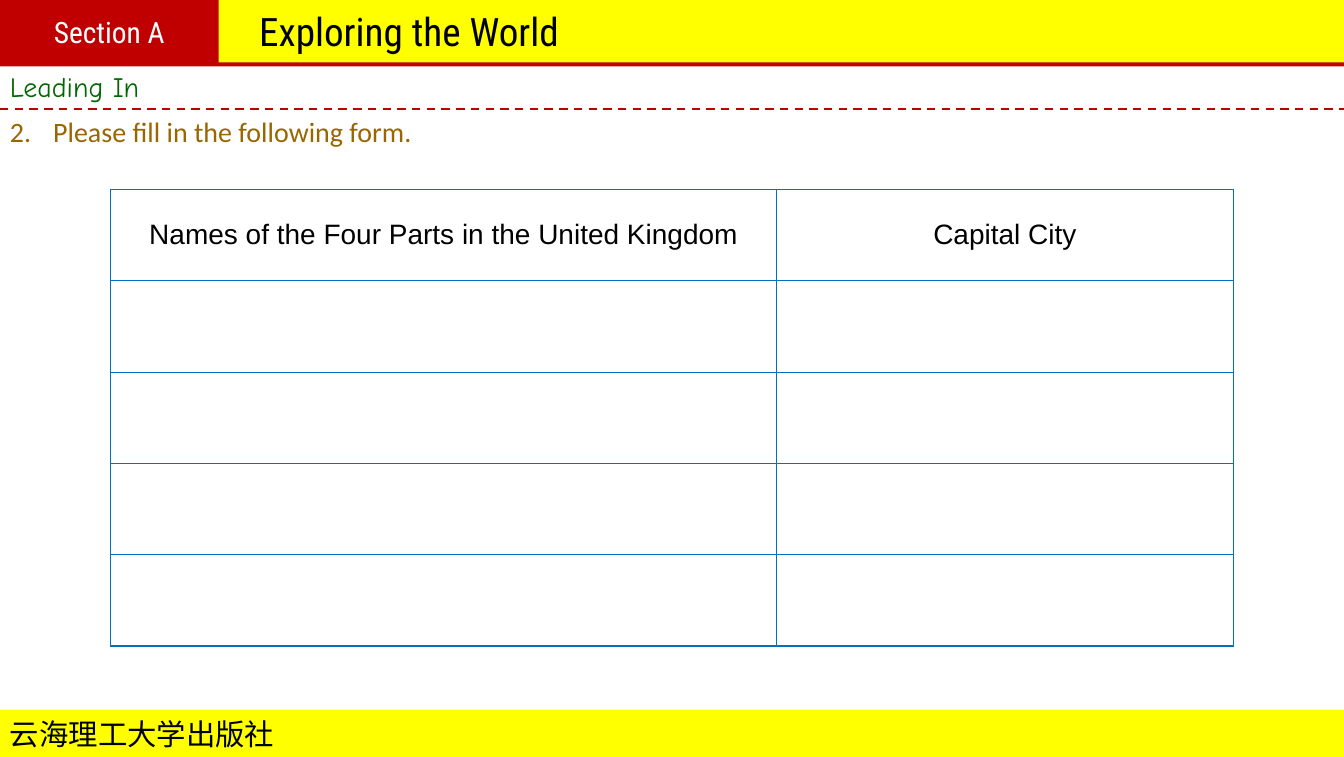
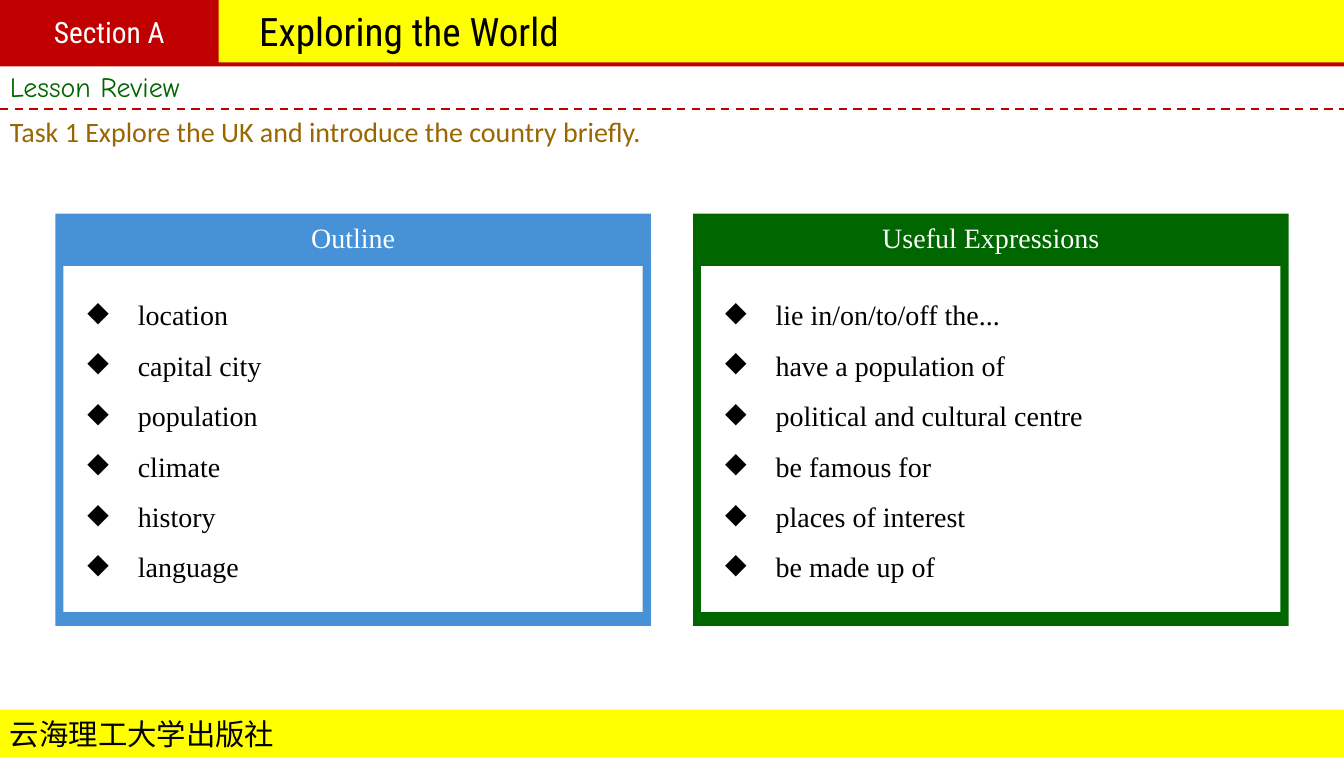
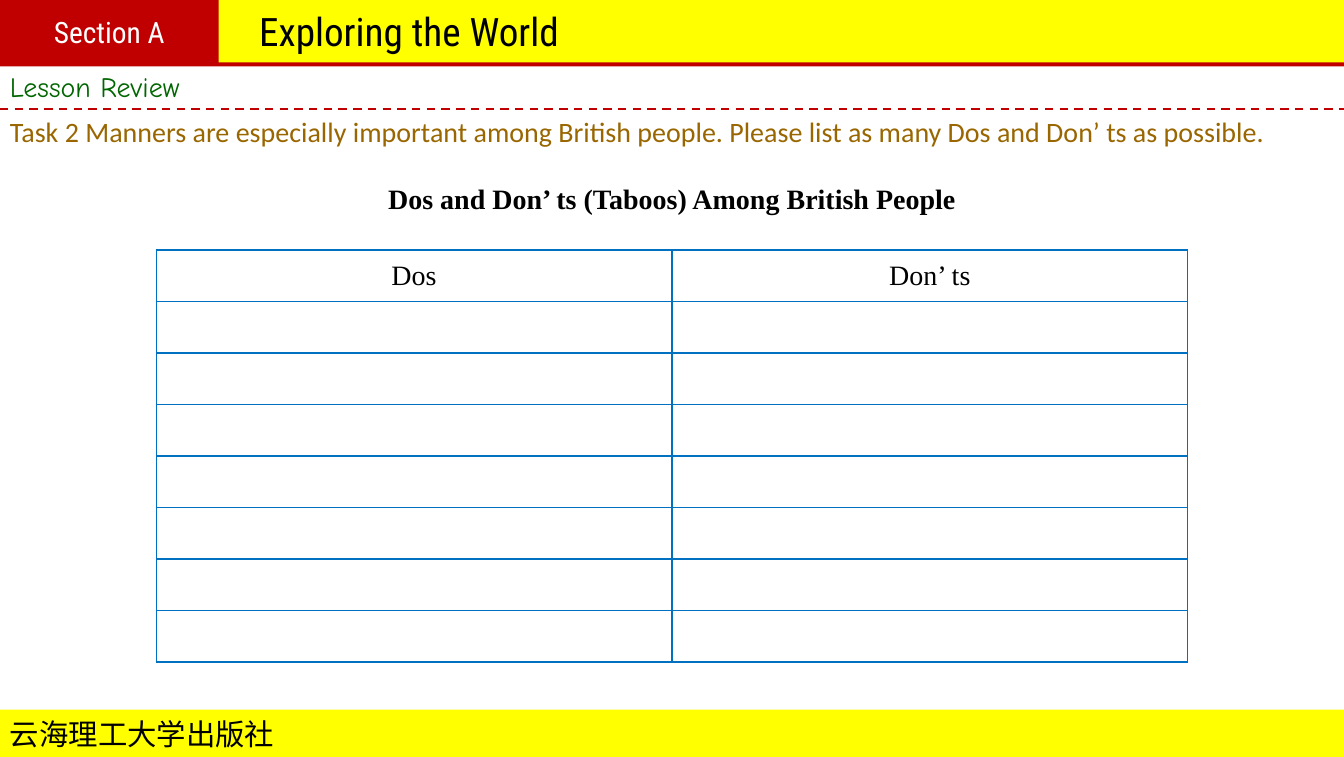
from lxml.etree import SubElement
from pptx import Presentation
from pptx.dml.color import RGBColor
from pptx.enum.dml import MSO_LINE
from pptx.enum.shapes import MSO_CONNECTOR, MSO_SHAPE
from pptx.enum.text import MSO_ANCHOR, PP_ALIGN
from pptx.oxml import parse_xml
from pptx.oxml.ns import nsdecls, qn
from pptx.util import Inches, Pt

WIDTH, HEIGHT = 13.34, 7.51
TITLE_ONLY = 5
COLORS = {
    "yellow": "FFFF00", "red": "C00000", "green": "006600", "brown": "996600",
    "blue": "4792D7", "border": "0070C0", "black": "000000", "white": "FFFFFF",
}
SANS, TITLE, HAND, BODY, SERIF = (
    "Arial", "Roboto Condensed", "Comic Neue", "Calibri", "Times New Roman")


def rgb(name):
    return RGBColor.from_string(COLORS[name])


class Deck:
    def __init__(self):
        self.prs = Presentation()
        self.prs.slide_width, self.prs.slide_height = Inches(WIDTH), Inches(HEIGHT)
        self.layout = self.prs.slide_layouts[TITLE_ONLY]
        for ph in list(self.layout.placeholders)[1:]:
            ph.element.getparent().remove(ph.element)
        self.s = None

    def add_text(self, p, text, font, size=20, color="black", align=PP_ALIGN.LEFT, bold=False):
        p.alignment = align
        r = p.add_run()
        r.text = text
        r.font.name, r.font.size, r.font.bold = font, Pt(size), bold
        r.font.color.rgb = rgb(color)

    def rect(self, x, y, w, h, color):
        sp = self.s.shapes.add_shape(
            MSO_SHAPE.RECTANGLE, Inches(x), Inches(y), Inches(w), Inches(h))
        sp.shadow.inherit = False
        sp.fill.solid()
        sp.fill.fore_color.rgb = rgb(color)
        sp.line.fill.background()
        sp.text_frame.vertical_anchor = MSO_ANCHOR.MIDDLE
        return sp

    def dashed_line(self, y):
        line = self.s.shapes.add_connector(
            MSO_CONNECTOR.STRAIGHT, 0, Inches(y), Inches(WIDTH), Inches(y))
        line.line.color.rgb = rgb("red")
        line.line.width = Pt(1.5)
        line.line.dash_style = MSO_LINE.DASH
        SubElement(line.element.spPr, qn("a:effectLst"))
        return line

    def text_box(self, x, y, w, h=0.44):
        tf = self.s.shapes.add_textbox(
            Inches(x), Inches(y), Inches(w), Inches(h)).text_frame
        tf.word_wrap = True
        return tf

    def bullet(self, p, indent, tag, **attrs):
        pPr = p._p.get_or_add_pPr()
        pPr.set("marL", str(Inches(indent)))
        pPr.set("indent", str(-Inches(indent)))
        SubElement(pPr, qn(tag), **attrs)

    def shared_bands(self):
        """Draw the common bands and move them to the layout."""
        footer = self.rect(0, 7.04, WIDTH, 0.47, "yellow")
        self.add_text(footer.text_frame.paragraphs[0], "云海理工大学出版社", SANS, 21)
        bands = [footer, self.rect(0, 0, WIDTH, 0.63, "yellow"),
                 self.rect(0, 0.62, WIDTH, 0.04, "red"), self.dashed_line(1.08)]
        for band in bands:
            self.layout.shapes.element.append(band.element)

    def slide(self, label, task, number=None):
        first = self.s is None
        self.s = self.prs.slides.add_slide(self.layout)
        if first:
            self.shared_bands()
        title = self.s.shapes.title
        title.left, title.top = Inches(2.37), Inches(0.01)
        title.width, title.height = Inches(3.38), Inches(0.59)
        tf = title.text_frame
        tf.word_wrap, tf.vertical_anchor = False, MSO_ANCHOR.MIDDLE
        self.add_text(tf.paragraphs[0], "Exploring the World", TITLE, 28, align=PP_ALIGN.CENTER)
        section = self.rect(0, 0, 2.17, 0.63, "red")
        self.add_text(section.text_frame.paragraphs[0], "Section A", TITLE, 21, "white",
                      PP_ALIGN.CENTER)
        self.add_text(self.text_box(0, 0.64, 3).paragraphs[0], label, HAND, color="green")
        p = self.text_box(0, 1.09, WIDTH).paragraphs[0]
        self.add_text(p, task, BODY, color="brown")
        if number:
            self.bullet(p, 0.43, "a:buAutoNum", type="arabicPeriod", startAt=str(number))

    def heading(self, x, y, w, text, color="black", bold=False):
        self.add_text(self.text_box(x, y, w).paragraphs[0], text, SERIF, color=color,
                      align=PP_ALIGN.CENTER, bold=bold)

    def panel(self, x, color, heading, items):
        self.rect(x, 2.12, 5.91, 4.09, color)
        self.rect(x + 0.08, 2.64, 5.75, 3.43, "white")
        self.heading(x, 2.14, 5.91, heading, "white")
        tf = self.text_box(x + 0.22, 2.74, 5.47, 3.13)
        for i, item in enumerate(items):
            p = tf.add_paragraph() if i else tf.paragraphs[0]
            self.add_text(p, item, SERIF)
            p.line_spacing = 1.5
            self.bullet(p, 0.5, "a:buChar", char="◆")

    def table(self, x, y, h, widths, rows, headers, font):
        """Add a bordered form with a header row and empty rows below it."""
        table = self.s.shapes.add_table(
            rows, len(widths), Inches(x), Inches(y), Inches(sum(widths)), Inches(h)).table
        table.first_row = table.horz_banding = False
        for column, width in zip(table.columns, widths):
            column.width = Inches(width)
        for cell in table.iter_cells():
            cell.fill.solid()
            cell.fill.fore_color.rgb = rgb("white")
            cell.vertical_anchor = MSO_ANCHOR.MIDDLE
            for i, side in enumerate("LRTB"):
                cell._tc.tcPr.insert(i, parse_xml(
                    f'<a:ln{side} {nsdecls("a")} w="{Pt(1)}"><a:solidFill>'
                    f'<a:srgbClr val="{COLORS["border"]}"/></a:solidFill></a:ln{side}>'))
        for i, header in enumerate(headers):
            self.add_text(table.cell(0, i).text_frame.paragraphs[0], header, font,
                          align=PP_ALIGN.CENTER)


def main():
    deck = Deck()

    deck.slide("Leading In", "Please fill in the following form.", number=2)
    deck.table(1.1, 1.88, 4.53, [6.61, 4.53], 5,
               ["Names of the Four Parts in the United Kingdom", "Capital City"], SANS)

    deck.slide("Lesson Review", "Task 1 Explore the UK and introduce the country briefly.")
    deck.panel(0.55, "blue", "Outline", [
        "location", "capital city", "population", "climate", "history", "language"])
    deck.panel(6.88, "green", "Useful Expressions", [
        "lie in/on/to/off the...", "have a population of", "political and cultural centre",
        "be famous for", "places of interest", "be made up of"])

    deck.slide("Lesson Review", "Task 2 Manners are especially important among British people. "
               "Please list as many Dos and Don’ ts as possible.")
    deck.heading(3.53, 1.75, 6.28, "Dos and Don’ ts (Taboos) Among British People", bold=True)
    deck.table(1.55, 2.48, 4.09, [5.12, 5.12], 8, ["Dos", "Don’ ts"], SERIF)

    deck.prs.save("out.pptx")


if __name__ == "__main__":
    main()
